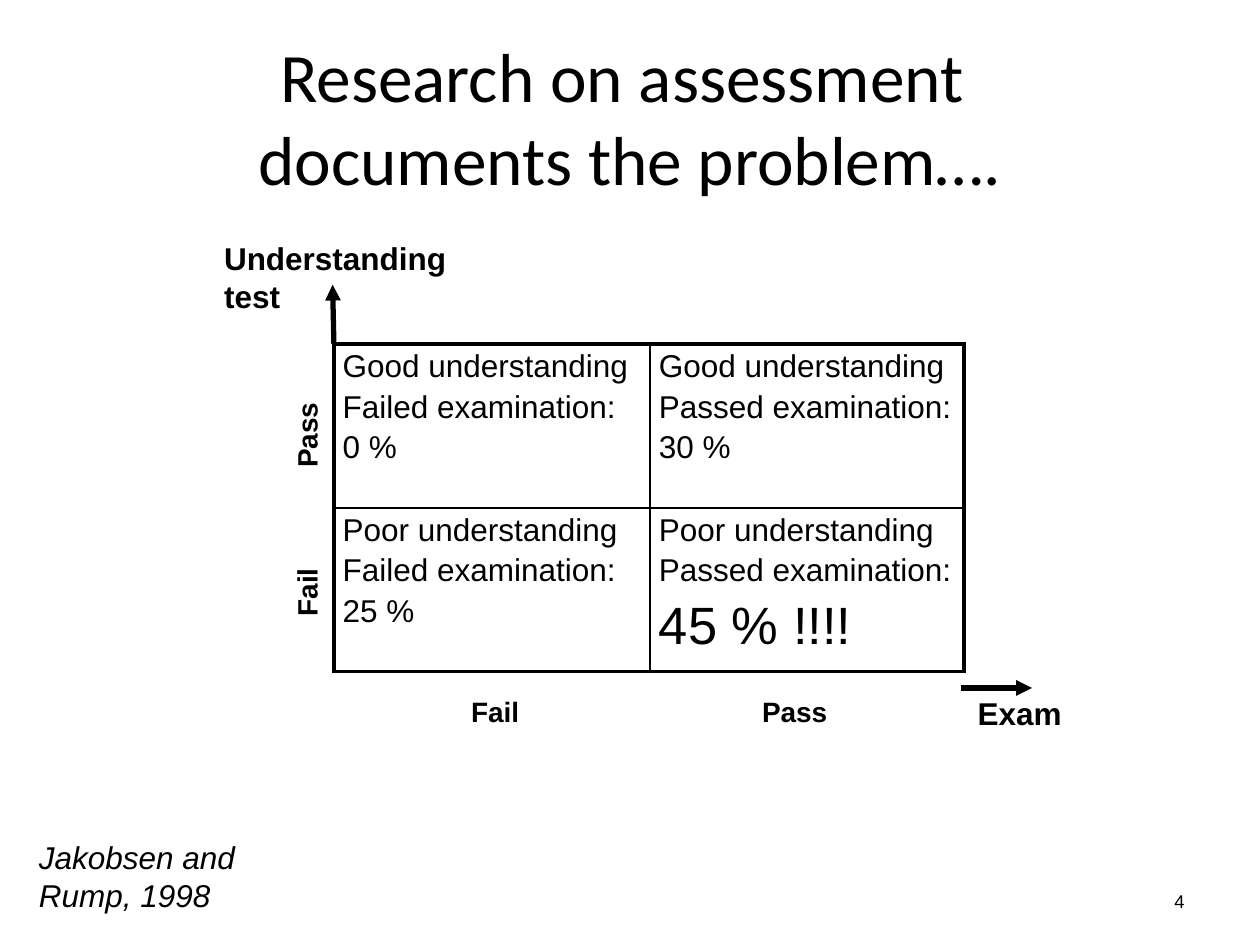
from lxml import etree
from pptx import Presentation
from pptx import util as u
from pptx.dml.color import RGBColor
from pptx.enum import shapes, text
from pptx.oxml.ns import qn

BLACK = RGBColor(0, 0, 0)
THICK, THIN = 2.25, 1
TABLE_LEFT, TABLE_TOP = 2.65, 2.73
COL_WIDTHS = (2.51, 2.49)
ROW_HEIGHT = 1.3
BODY_SIZE = 18

OUTCOMES = [
    [("Good understanding", "Failed examination:", "0 %"),
     ("Good understanding", "Passed examination:", "30 %")],
    [("Poor understanding", "Failed examination:", "25 %"),
     ("Poor understanding", "Passed examination:", "45 % !!!!")],
]

# text, (left, top, width, height), size, rotation
AXIS_LABELS = [
    ("Fail", (3.64, 5.46, 0.71, 0.37), 16, 0),
    ("Pass", (5.95, 5.46, 0.77, 0.37), 16, 0),
    ("Fail", (2.08, 4.45, 0.71, 0.37), 16, 270),
    ("Pass", (2.02, 3.21, 0.83, 0.37), 16, 270),
    ("Understanding test", (1.68, 1.85, 2.12, 0.71), 18, 0),
    ("Exam", (7.66, 5.46, 0.95, 0.4), 18, 0),
]


def add_run(p, words, size, font="Arial", bold=False, italic=False):
    r = p.add_run()
    r.text = words
    r.font.name = font
    r.font.size = u.Pt(size)
    r.font.bold = bold
    r.font.italic = italic
    r.font.color.rgb = BLACK


def add_text(s, lines, box, size, align=text.PP_ALIGN.LEFT,
             anchor=text.MSO_ANCHOR.TOP, rotation=0, **style):
    """Add a text box with one paragraph, its lines parted by line breaks."""
    sp = s.shapes.add_textbox(*map(u.Inches, box))
    sp.rotation = rotation
    tf = sp.text_frame
    tf.word_wrap = True
    tf.vertical_anchor = anchor
    p = tf.paragraphs[0]
    p.alignment = align
    for i, line in enumerate(lines):
        if i:
            p.add_line_break()
        add_run(p, line, size, **style)


def set_borders(cell, widths):
    """Draw black borders, with widths in points for left, right, top, bottom."""
    tc_pr = cell._tc.get_or_add_tcPr()
    for side, width in zip("LRTB", widths):
        ln = etree.SubElement(tc_pr, qn(f"a:ln{side}"), w=str(u.Pt(width)))
        fill = etree.SubElement(ln, qn("a:solidFill"))
        etree.SubElement(fill, qn("a:srgbClr"), val=str(BLACK))


def fill_cell(cell, lines):
    cell.margin_left = cell.margin_right = u.Inches(0.07)
    cell.margin_top = cell.margin_bottom = u.Inches(0.04)
    tf = cell.text_frame
    for i, line in enumerate(lines):
        p = tf.add_paragraph() if i else tf.paragraphs[0]
        size = 30 if line.endswith("!") else BODY_SIZE
        p.space_before = u.Pt(size / 6)
        add_run(p, line, size)


def add_outcome_table(s):
    rows, cols = len(OUTCOMES), len(COL_WIDTHS)
    frame = s.shapes.add_table(
        rows, cols, u.Inches(TABLE_LEFT), u.Inches(TABLE_TOP),
        u.Inches(sum(COL_WIDTHS)), u.Inches(rows * ROW_HEIGHT))
    table = frame.table
    table.first_row = table.horz_banding = False
    for col, width in zip(table.columns, COL_WIDTHS):
        col.width = u.Inches(width)
    for i, row in enumerate(OUTCOMES):
        table.rows[i].height = u.Inches(ROW_HEIGHT)
        for j, lines in enumerate(row):
            cell = table.cell(i, j)
            outer = (j == 0, j == cols - 1, i == 0, i == rows - 1)
            set_borders(cell, [THICK if edge else THIN for edge in outer])
            cell.fill.background()
            fill_cell(cell, lines)


def add_arrow(s, start, end):
    line = s.shapes.add_connector(
        shapes.MSO_CONNECTOR.STRAIGHT, *map(u.Inches, start + end))
    line.line.color.rgb = BLACK
    line.line.width = u.Pt(3)
    etree.SubElement(line.line._get_or_add_ln(), qn("a:tailEnd"), type="triangle")
    etree.SubElement(line._element.spPr, qn("a:effectLst"))


def main():
    prs = Presentation()
    prs.slide_width, prs.slide_height = u.Inches(10), u.Inches(7.5)
    s = prs.slides.add_slide(prs.slide_layouts[6])
    middle = text.MSO_ANCHOR.MIDDLE

    add_text(s, ["Research on assessment ", "documents the problem…."],
             (0.5, 0.3, 9, 1.25), 39.6, text.PP_ALIGN.CENTER, middle,
             font="Calibri")
    add_text(s, ["4"], (7.17, 6.95, 2.33, 0.4), 10.5,
             text.PP_ALIGN.RIGHT, middle)
    add_outcome_table(s)
    for words, box, size, rotation in AXIS_LABELS:
        add_text(s, [words], box, size, rotation=rotation, bold=True)
    add_text(s, ["Jakobsen and Rump, 1998"], (0.21, 6.6, 2.22, 0.71), 18,
             italic=True)
    add_arrow(s, (TABLE_LEFT, TABLE_TOP), (2.64, 2.26))
    add_arrow(s, (7.63, 5.46), (8.19, 5.46))

    prs.save("out.pptx")


if __name__ == "__main__":
    main()
